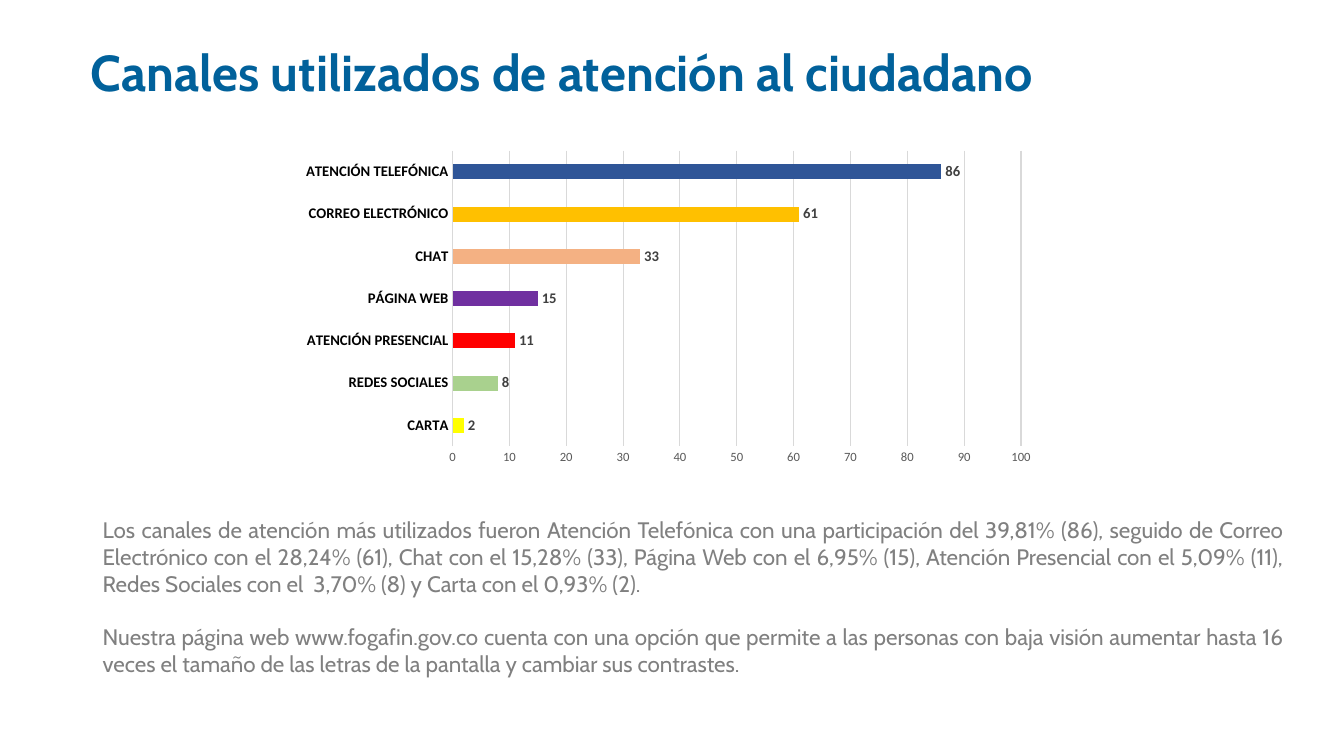
from lxml.etree import SubElement
from pptx import Presentation
from pptx.chart.data import CategoryChartData
from pptx.dml.color import RGBColor
from pptx.enum.chart import XL_CHART_TYPE, XL_LABEL_POSITION, XL_TICK_MARK
from pptx.enum.text import MSO_ANCHOR, PP_ALIGN
from pptx.oxml.ns import qn
from pptx.util import Inches, Pt

WIDTH, HEIGHT = Inches(13.33), Inches(7.5)
COLS = ROWS = 100

TITLE = "Canales utilizados de atención al ciudadano"
BODY = [
    "Los canales de atención más utilizados fueron Atención Telefónica con una "
    "participación del 39,81% (86), seguido de Correo Electrónico con el 28,24% (61), "
    "Chat con el 15,28% (33), Página Web con el 6,95% (15), Atención Presencial con el "
    "5,09% (11), Redes Sociales con el  3,70% (8) y Carta con el 0,93% (2).",
    "Nuestra página web www.fogafin.gov.co cuenta con una opción que permite a las "
    "personas con baja visión aumentar hasta 16 veces el tamaño de las letras de la "
    "pantalla y cambiar sus contrastes.",
]
CHANNELS = [
    ("CARTA", 2, "FFFF00"),
    ("REDES SOCIALES", 8, "A9D18E"),
    ("ATENCIÓN PRESENCIAL", 11, "FF0000"),
    ("PÁGINA WEB", 15, "7030A0"),
    ("CHAT", 33, "F4B183"),
    ("CORREO ELECTRÓNICO", 61, "FFC000"),
    ("ATENCIÓN TELEFÓNICA", 86, "2F5597"),
]
PLOT_AREA = {"x": 0.21, "y": 0.02, "w": 0.75, "h": 0.9}

TITLE_FONT = {"name": "Cabin", "size": Pt(36), "bold": True}
BODY_FONT = {"name": "Cabin", "size": Pt(16), "bold": False}
CHART_FONT = {"name": "Calibri", "size": Pt(10), "bold": False}
LABEL_FONT = {"name": "Calibri", "size": Pt(10.5), "bold": True}
SCALE_FONT = {"name": "Calibri", "size": Pt(9), "bold": False}


def rgb(color):
    return RGBColor.from_string(color)


def grid(col, row, cols, rows):
    return (int(WIDTH * col / COLS), int(HEIGHT * row / ROWS),
            int(WIDTH * cols / COLS), int(HEIGHT * rows / ROWS))


def set_attrs(obj, values):
    for name, value in values.items():
        setattr(obj, name, value)


def set_font(font, values, color):
    set_attrs(font, values)
    font.color.rgb = rgb(color)


def set_line(line, color):
    line.color.rgb = rgb(color)
    line.width = Pt(0.75)


def add_text(s, area, texts, font, color, frame, para, gap=0):
    tf = s.shapes.add_textbox(*area).text_frame
    set_attrs(tf, {"word_wrap": True, **frame})
    for i, text in enumerate(texts):
        p = tf.add_paragraph() if i else tf.paragraphs[0]
        set_attrs(p, para)
        if i:
            p.space_before = Pt(gap)
        r = p.add_run()
        r.text = text
        set_font(r.font, font, color)


def place_plot(chart, shares):
    area = chart._chartSpace.chart.plotArea
    for old in area.findall(qn("c:layout")):
        area.remove(old)
    layout = SubElement(area, qn("c:layout"))
    area.insert(0, layout)
    manual = SubElement(layout, qn("c:manualLayout"))
    settings = {"layoutTarget": "inner", "xMode": "edge", "yMode": "edge", **shares}
    for tag, value in settings.items():
        SubElement(manual, qn(f"c:{tag}")).set("val", str(value))


def style_axis(axis, font, color):
    set_attrs(axis, {"major_tick_mark": XL_TICK_MARK.NONE,
                     "minor_tick_mark": XL_TICK_MARK.NONE})
    set_font(axis.tick_labels.font, font, color)


def add_bars(s, area, channels):
    names, values, colors = zip(*channels)
    data = CategoryChartData()
    data.categories = names
    data.add_series("Series 1", values)
    chart = s.shapes.add_chart(XL_CHART_TYPE.BAR_CLUSTERED, *area, data).chart
    set_attrs(chart, {"has_legend": False, "has_title": False})
    set_font(chart.font, CHART_FONT, "000000")
    place_plot(chart, PLOT_AREA)

    style_axis(chart.category_axis, LABEL_FONT, "000000")
    set_line(chart.category_axis.format.line, "D9D9D9")
    scale = chart.value_axis
    style_axis(scale, SCALE_FONT, "595959")
    set_attrs(scale, {"minimum_scale": 0, "maximum_scale": 100, "major_unit": 10,
                      "has_major_gridlines": True})
    scale.format.line.fill.background()
    set_line(scale.major_gridlines.format.line, "D9D9D9")

    plot = chart.plots[0]
    set_attrs(plot, {"gap_width": 182, "vary_by_categories": False})
    series = plot.series[0]
    series.format.fill.solid()
    series.format.fill.fore_color.rgb = rgb("5B9BD5")
    for i, color in enumerate(colors):
        fill = series.points[i].format.fill
        fill.solid()
        fill.fore_color.rgb = rgb(color)
    labels = series.data_labels
    set_attrs(labels, {"show_value": True, "position": XL_LABEL_POSITION.OUTSIDE_END})
    set_font(labels.font, LABEL_FONT, "404040")


def main():
    prs = Presentation()
    set_attrs(prs, {"slide_width": WIDTH, "slide_height": HEIGHT})
    s = prs.slides.add_slide(prs.slide_layouts[6])
    add_text(s, grid(6, 2.67, 79.4, 14.53), [TITLE], TITLE_FONT, "01619B",
             {"vertical_anchor": MSO_ANCHOR.MIDDLE}, {"line_spacing": 0.9})
    add_bars(s, grid(21.83, 19.07, 56.4, 43.47), CHANNELS)
    add_text(s, grid(6.9, 67.6, 89.4, 22.93), BODY, BODY_FONT, "808080",
             {"vertical_anchor": MSO_ANCHOR.TOP}, {"alignment": PP_ALIGN.JUSTIFY}, gap=19)
    prs.save("out.pptx")


if __name__ == "__main__":
    main()
